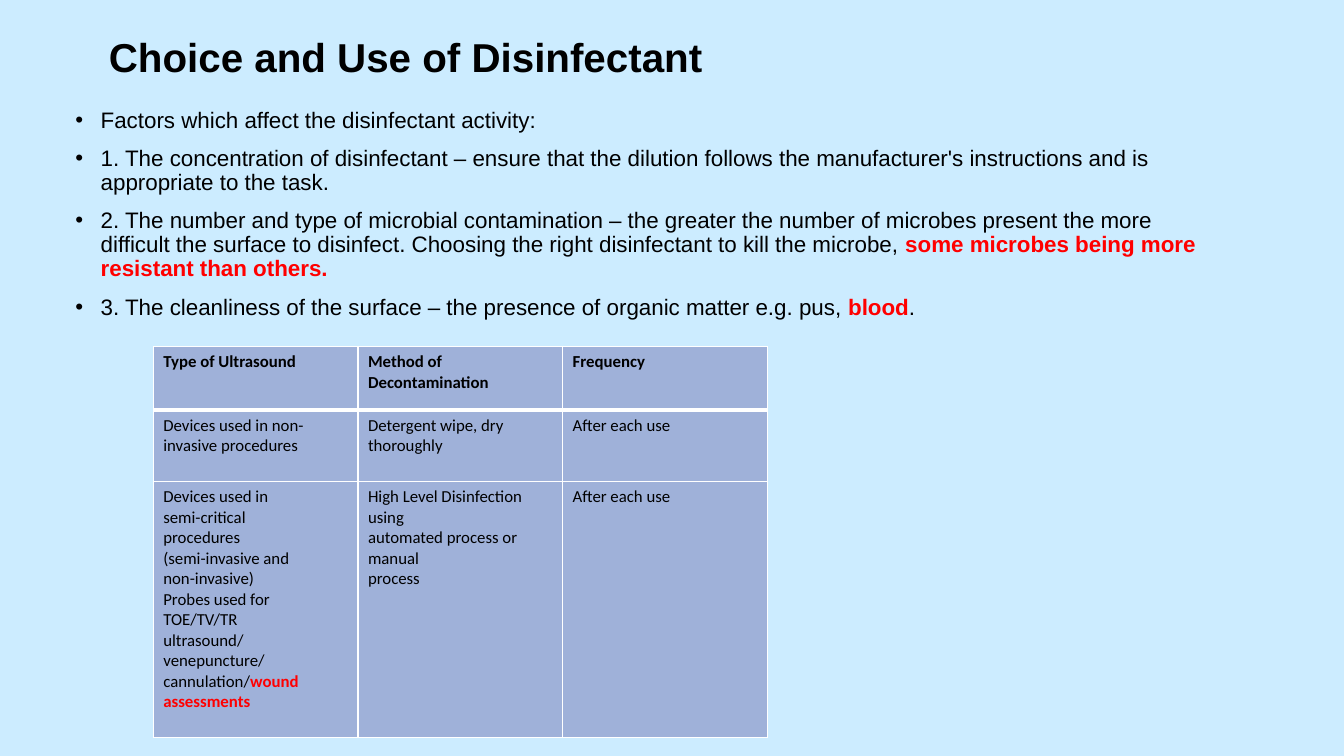
from dataclasses import dataclass
from itertools import product
from lxml import etree
from pptx import Presentation
from pptx import util as u
from pptx.dml.color import RGBColor
from pptx.enum import text
from pptx.oxml.ns import qn


@dataclass(frozen=True)
class Theme:
    """Colours, fonts and type sizes of the slide."""
    back: str = "CCECFF"
    ink: str = "000000"
    alert: str = "FF0000"
    cell: str = "9FB1D9"
    rule: str = "FFFFFF"
    sans: str = "Arial"
    grid: str = "Calibri"
    head: float = 28.8
    body: float = 16
    small: float = 12


THEME = Theme()
TITLE = "Choice and Use of Disinfectant"
FACTORS = [
    "Factors which affect the disinfectant activity:",
    "1. The concentration of disinfectant – ensure that the dilution follows "
    "the manufacturer's instructions and is appropriate to the task.",
    "2. The number and type of microbial contamination – the greater the number "
    "of microbes present the more difficult the surface to disinfect. Choosing "
    "the right disinfectant to kill the microbe, "
    "*some microbes being more resistant than others.*",
    "3. The cleanliness of the surface – the presence of organic matter "
    "e.g. pus, *blood*.",
]
ROWS = [
    ["Type of Ultrasound", "Method of Decontamination", "Frequency"],
    ["Devices used in non- invasive procedures",
     "Detergent wipe, dry thoroughly", "After each use"],
    ["Devices used in\nsemi-critical\nprocedures\n(semi-invasive and\n"
     "non-invasive)\nProbes used for\nTOE/TV/TR\nultrasound/\nvenepuncture/\n"
     "cannulation/*wound*\n*assessments*",
     "High Level Disinfection using\nautomated process or manual\nprocess",
     "After each use"],
]
HEIGHTS = [0.63, 0.71, 2.54]


def write(para, line, font, size, bold=False):
    """Fill a paragraph, with the parts between asterisks in bold red."""
    for i, part in enumerate(line.split("*")):
        if part:
            run = para.add_run()
            run.text = part
            run.font.name, run.font.size = font, u.Pt(size)
            run.font.bold = bold or i % 2 == 1
            run.font.color.rgb = RGBColor.from_string(
                THEME.alert if i % 2 else THEME.ink)


def fill_text(frame, lines, font, size, bold=False):
    """Write one paragraph per line and return the paragraphs."""
    for i, line in enumerate(lines):
        para = frame.add_paragraph() if i else frame.paragraphs[0]
        write(para, line, font, size, bold)
    return frame.paragraphs


def place_title(slide, left, top, width, height):
    """Put the heading in the title placeholder."""
    title = slide.shapes.title
    title.left, title.top, title.width, title.height = map(
        u.Inches, (left, top, width, height))
    frame = title.text_frame
    frame.vertical_anchor = text.MSO_ANCHOR.TOP
    frame.auto_size = text.MSO_AUTO_SIZE.NONE
    para, = fill_text(frame, [TITLE], THEME.sans, THEME.head, True)
    para.alignment = text.PP_ALIGN.LEFT
    para.line_spacing = 0.9


def place_list(slide, left, top, width, height):
    """Add the bulleted list of factors."""
    box = slide.shapes.add_textbox(*map(u.Inches, (left, top, width, height)))
    box.text_frame.word_wrap = True
    paras = fill_text(box.text_frame, FACTORS, THEME.sans, THEME.body)
    for para in paras:
        para.line_spacing = 0.9
        para.space_before = u.Pt(10)
        props = para._p.get_or_add_pPr()
        props.set("marL", str(u.Inches(0.25)))
        props.set("indent", str(-u.Inches(0.25)))
        etree.SubElement(props, qn("a:buFont"), typeface=THEME.sans)
        etree.SubElement(props, qn("a:buChar"), char="•")


def add_rules(cell, widths):
    """Draw the cell borders, given the side tags and widths in points."""
    props = cell._tc.get_or_add_tcPr()
    for i, (side, width) in enumerate(widths.items()):
        line = etree.Element(qn("a:" + side), w=str(u.Pt(width)))
        fill = etree.SubElement(line, qn("a:solidFill"))
        etree.SubElement(fill, qn("a:srgbClr"), val=THEME.rule)
        props.insert(i, line)


def place_table(slide, left, top, width, height):
    """Add the table of decontamination methods."""
    count = len(ROWS[0])
    table = slide.shapes.add_table(
        len(ROWS), count, *map(u.Inches, (left, top, width, height))).table
    for col in table.columns:
        col.width = u.Inches(width / count)
    for row, tall in zip(table.rows, HEIGHTS):
        row.height = u.Inches(tall)
    for r, c in product(range(len(ROWS)), range(count)):
        cell = table.cell(r, c)
        cell.fill.solid()
        cell.fill.fore_color.rgb = RGBColor.from_string(THEME.cell)
        fill_text(cell.text_frame, ROWS[r][c].split("\n"),
                  THEME.grid, THEME.small, r == 0)
        add_rules(cell, {"lnL": 1, "lnR": 1, "lnT": 3 if r == 1 else 1,
                         "lnB": 3 if r == 0 else 1})


def main():
    """Build the slide and save it."""
    deck = Presentation()
    deck.slide_width, deck.slide_height = u.Inches(13.33), u.Inches(7.5)
    slide = deck.slides.add_slide(deck.slide_layouts[5])
    back = slide.background.fill
    back.solid()
    back.fore_color.rgb = RGBColor.from_string(THEME.back)
    place_title(slide, 0.98, 0.32, 11.44, 0.71)
    place_list(slide, 0.65, 1.03, 11.62, 2.41)
    place_table(slide, 1.52, 3.44, 6.09, sum(HEIGHTS))
    deck.save("out.pptx")


if __name__ == "__main__":
    main()
